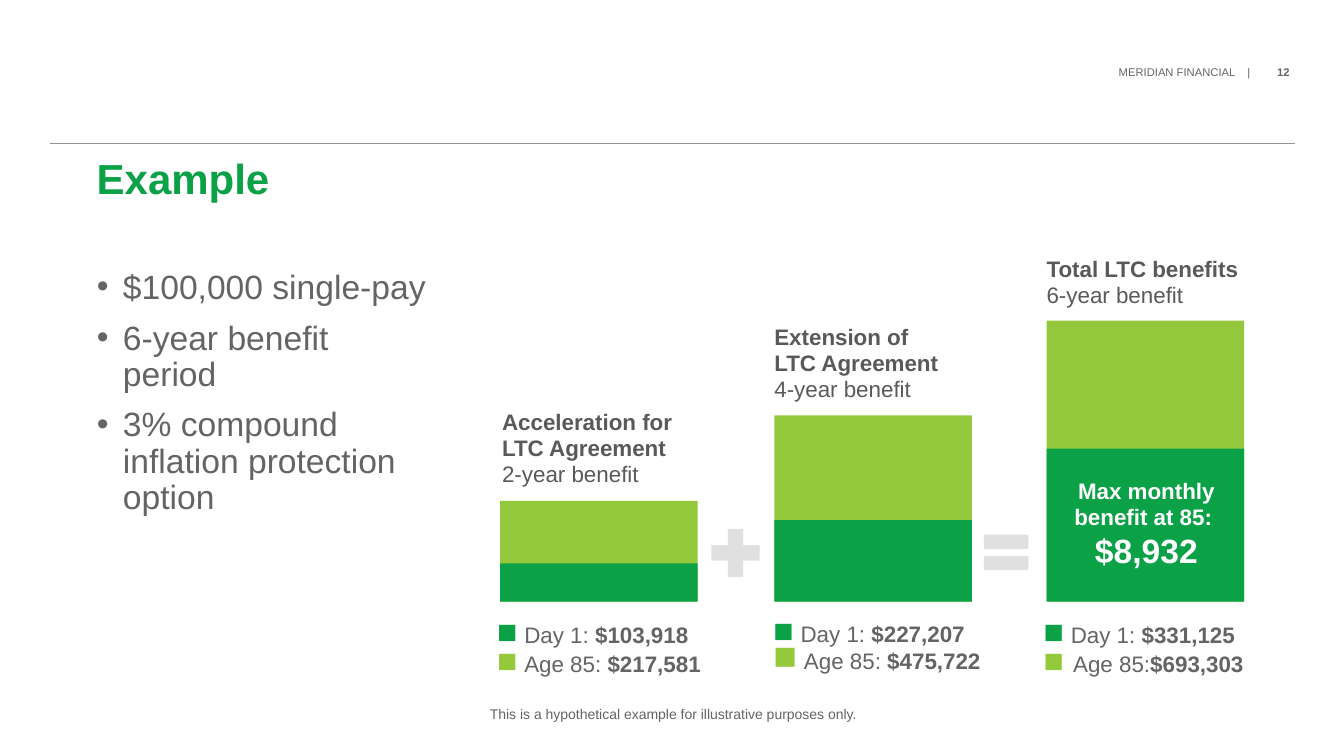
import pptx
import pptx.util
from lxml import etree
from pptx.dml.color import RGBColor
from pptx.enum.shapes import MSO_SHAPE
from pptx.enum.text import MSO_ANCHOR, PP_ALIGN
from pptx.oxml.ns import qn
from pptx.util import Inches, Pt

GREEN = RGBColor(0x0A, 0xA1, 0x47)
LIME = RGBColor(0x94, 0xC8, 0x3C)
LEGEND_LIME = RGBColor(0x95, 0xC9, 0x3C)
GRAY = RGBColor(0x63, 0x64, 0x66)
DARK_GRAY = RGBColor(0x58, 0x59, 0x5B)
PALE_GRAY = RGBColor(0xE0, 0xE0, 0xE1)
RULE_GRAY = RGBColor(0x92, 0x94, 0x97)
WHITE = RGBColor(0xFF, 0xFF, 0xFF)

TITLE = "Example"
HEADER, PAGE = "MERIDIAN FINANCIAL    |\t", "12"
BULLETS = ["$100,000 single-pay", "6-year benefit period",
           "3% compound inflation protection option"]
FOOTNOTE = "This is a hypothetical example for illustrative purposes only."
CALLOUT = ("Max monthly benefit at 85: ", "$8,932")
BAR_WIDTH, BAR_BOTTOM = 1.96, 5.97
COLUMNS = [
    {"left": 4.96, "total": 1.0, "day_one": 0.38,
     "heading": ["Acceleration for", "LTC Agreement"], "term": "2-year benefit",
     "heading_box": (4.98, 4.06, 1.93, 0.8), "legend_box": (4.93, 6.16, 2.33, 0.59),
     "leading": 20.8, "amounts": ("$103,918", "$217,581"),
     "age_label": "Age 85: ", "age_marker": 24, "age_gap": 18},
    {"left": 7.68, "total": 1.85, "day_one": 0.81,
     "heading": ["Extension of", "LTC Agreement"], "term": "4-year benefit",
     "heading_box": (7.68, 3.21, 2.38, 0.8), "legend_box": (7.67, 6.15, 2.65, 0.6),
     "leading": 20.6, "amounts": ("$227,207", "$475,722"),
     "age_label": "Age 85: ", "age_marker": 28, "age_gap": 18},
    {"left": 10.38, "total": 2.79, "day_one": 1.52,
     "heading": ["Total LTC benefits"], "term": "6-year benefit",
     "heading_box": (10.38, 2.54, 2.29, 0.53), "legend_box": (10.35, 6.16, 2.65, 0.59),
     "leading": 20.8, "amounts": ("$331,125", "$693,303"),
     "age_label": "Age 85:", "age_marker": 24, "age_gap": 24},
]
OPERATORS = [(MSO_SHAPE.MATH_PLUS, (6.97, 5.16, 0.65, 0.65)),
             (MSO_SHAPE.MATH_EQUAL, (9.68, 5.18, 0.6, 0.6))]


def add_text(s, box, paragraphs, insets=(0, 0)):
    """Each paragraph is (format dict, [(text, size, colour, bold), ...])."""
    tf = s.shapes.add_textbox(*map(Inches, box)).text_frame
    across, down = map(Inches, insets)
    frame = {"word_wrap": True, "vertical_anchor": MSO_ANCHOR.TOP,
             "margin_left": across, "margin_right": across,
             "margin_top": down, "margin_bottom": down}
    for name, value in frame.items():
        setattr(tf, name, value)
    for i, (layout, runs) in enumerate(paragraphs):
        p = tf.add_paragraph() if i else tf.paragraphs[0]
        for name, value in layout.items():
            setattr(p, name, value)
        for text, size, color, bold in runs:
            for j, line in enumerate(text.split("\n")):
                if j:
                    p.add_line_break()
                r = p.add_run()
                r.text = line
                for name, value in {"name": "Arial", "size": Pt(size), "bold": bold}.items():
                    setattr(r.font, name, value)
                r.font.color.rgb = color
    return tf


def add_filled(s, kind, box, color):
    sp = s.shapes.add_shape(kind, *map(Inches, box))
    sp.shadow.inherit = False
    sp.fill.solid()
    sp.fill.fore_color.rgb = color
    sp.line.fill.background()


def add_header(s):
    tf = add_text(s, (10.53, 0.64, 2.26, 0.15),
                  [({"alignment": PP_ALIGN.RIGHT},
                    [(HEADER, 8, GRAY, False), (PAGE, 8, GRAY, True)])])
    tf.margin_top = Inches(0.01)
    pPr = tf.paragraphs[0]._p.get_or_add_pPr()
    tabs = etree.SubElement(pPr, qn("a:tabLst"))
    etree.SubElement(tabs, qn("a:tab"), pos=str(Inches(1.57)), algn="l")
    rule = s.shapes.add_connector(1, *map(Inches, (0.5, 1.42, 12.84, 1.42)))
    rule.line.color.rgb = RULE_GRAY
    rule.line.width = Pt(0.5)
    etree.SubElement(rule._element.spPr, qn("a:effectLst"))


def add_bullets(s):
    paragraphs = [({"line_spacing": Pt(26), "space_before": Pt(10 if i else 0)},
                   [(text, 24, GRAY, False)]) for i, text in enumerate(BULLETS)]
    tf = add_text(s, (0.96, 2.68, 3.29, 2.64), paragraphs)
    for p in tf.paragraphs:
        pPr = p._p.get_or_add_pPr()
        pPr.set("marL", str(Inches(0.26)))
        pPr.set("indent", str(-Inches(0.26)))
        etree.SubElement(pPr, qn("a:buFont"), typeface="Arial")
        etree.SubElement(pPr, qn("a:buChar"), char="•")


def add_column(s, col):
    """Draw the stacked bar with its heading above and its legend below."""
    for height, color in ((col["total"], LIME), (col["day_one"], GREEN)):
        add_filled(s, MSO_SHAPE.RECTANGLE,
                   (col["left"], BAR_BOTTOM - height, BAR_WIDTH, height), color)
    tight = {"line_spacing": Pt(18.6)}
    add_text(s, col["heading_box"],
             [(tight, [("\n".join(col["heading"]), 16, DARK_GRAY, True)]),
              (tight, [(col["term"], 16, DARK_GRAY, False)])])
    entries = [(GREEN, 24, 18, "Day 1: "),
               (LEGEND_LIME, col["age_marker"], col["age_gap"], col["age_label"])]
    add_text(s, col["legend_box"],
             [({"line_spacing": Pt(col["leading"])},
               [("■", marker, color, False), (" ", gap, color, False),
                (label, 16, GRAY, False), (amount, 16, GRAY, True)])
              for (color, marker, gap, label), amount in zip(entries, col["amounts"])])


def main():
    prs = pptx.Presentation()
    prs.slide_width, prs.slide_height = Inches(13.33), Inches(7.5)
    s = prs.slides.add_slide(prs.slide_layouts[6])
    add_header(s)
    add_text(s, (0.96, 1.58, 5.9, 0.77),
             [({"line_spacing": Pt(31)}, [(TITLE, 30, GREEN, True)])])
    add_bullets(s)
    for col in COLUMNS:
        add_column(s, col)
    label, amount = CALLOUT
    add_text(s, (10.39, 4.74, BAR_WIDTH, 0.94),
             [({"alignment": PP_ALIGN.CENTER, "line_spacing": Pt(18.6)},
               [(label, 16, WHITE, True)]),
              ({"alignment": PP_ALIGN.CENTER}, [(amount, 24, WHITE, True)])])
    for kind, box in OPERATORS:
        add_filled(s, kind, box, PALE_GRAY)
    add_text(s, (4.76, 6.95, 6.91, 0.27), [({}, [(FOOTNOTE, 10, GRAY, False)])],
             insets=(0.1, 0.05))
    prs.save("out.pptx")


if __name__ == "__main__":
    main()
